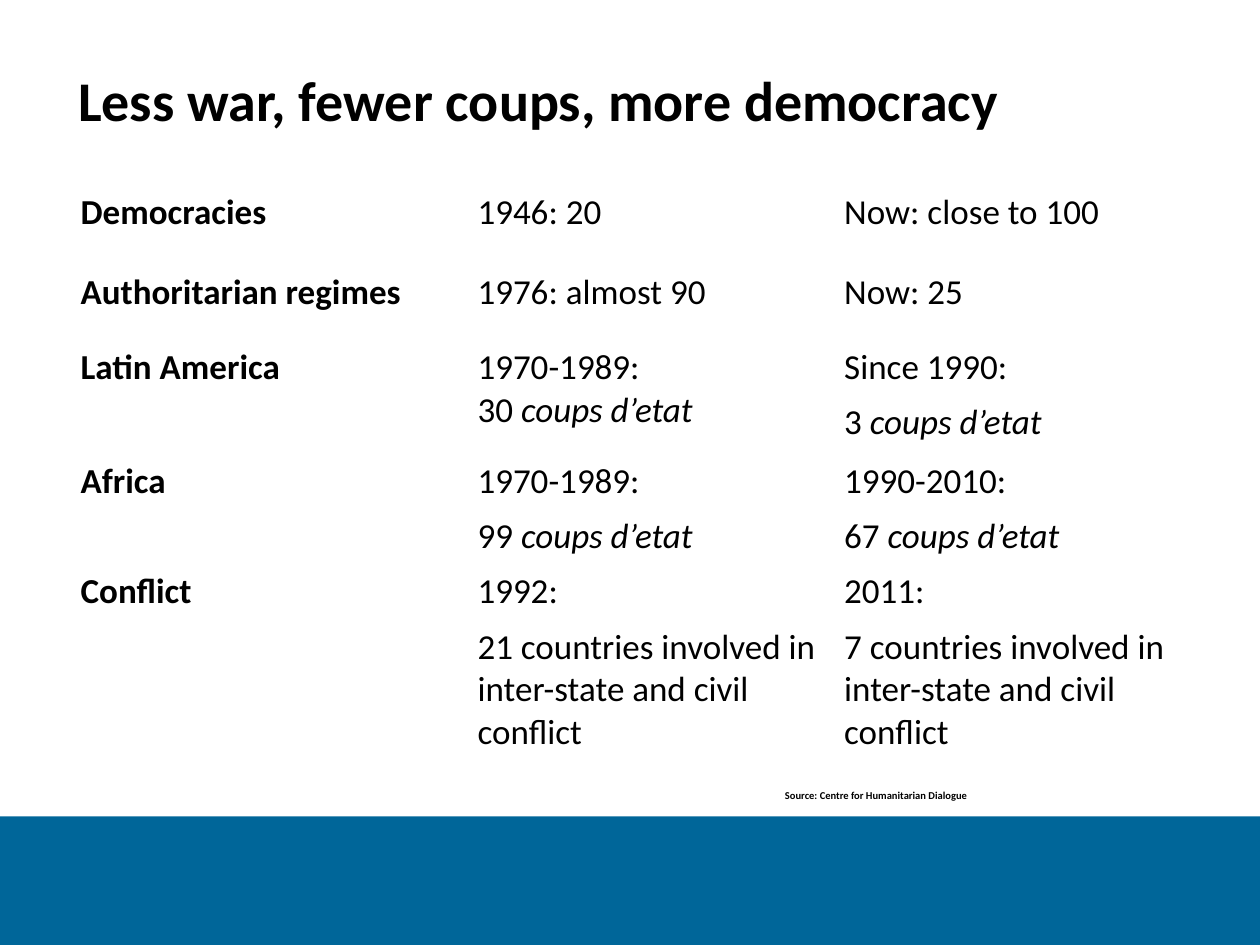
from dataclasses import dataclass

from lxml import etree
from pptx import Presentation
from pptx.dml.color import RGBColor
from pptx.enum.shapes import MSO_SHAPE
from pptx.enum.text import MSO_ANCHOR, PP_ALIGN
from pptx.oxml.ns import qn
from pptx.util import Inches, Pt

RECTANGLE = MSO_SHAPE.RECTANGLE
LEFT = PP_ALIGN.LEFT
TOP, MIDDLE, BOTTOM = MSO_ANCHOR.TOP, MSO_ANCHOR.MIDDLE, MSO_ANCHOR.BOTTOM
TITLE_ONLY = 5


@dataclass(frozen=True)
class Theme:
    font: str = "Calibri"
    text: str = "000000"
    band: str = "006699"
    rule: str = "FFFFFF"
    title_size: float = 32
    table_size: float = 20
    source_size: float = 6
    paragraph_gap: float = 7
    outer_rule: float = 2.25
    inner_rule: float = 1


THEME = Theme()
SLIDE_W, SLIDE_H = 10, 7.5
COLUMNS = (3.15, 2.91, 2.85)
ROWS = (0.63, 0.6, 0.9, 0.87, 1.53)
ITALIC = "coups d’etat"

# Each cell is a list of paragraphs; \v breaks a line within a paragraph.
FACTS = [
    (["Democracies"], ["1946: 20"], ["Now: close to 100"]),
    (["Authoritarian regimes"], ["1976: almost 90"], ["Now: 25"]),
    (["Latin America"], [f"1970-1989:\v30 {ITALIC}"],
     ["Since 1990:", f"3 {ITALIC}"]),
    (["Africa"], ["1970-1989:", f"99 {ITALIC}"],
     ["1990-2010:", f"67 {ITALIC}"]),
    (["Conflict"],
     ["1992:", "21 countries involved in inter-state and civil conflict"],
     ["2011:", "7 countries involved in inter-state and civil conflict"]),
]


def inches(box):
    return [Inches(v) for v in box]


def set_margins(target, margin):
    target.margin_left = target.margin_right = Inches(margin)
    target.margin_top = target.margin_bottom = Inches(margin)


def format_runs(p, size, bold):
    p.alignment = LEFT
    for r in p.runs:
        r.font.name = THEME.font
        r.font.size = Pt(size)
        r.font.bold = bold
        r.font.italic = r.text == ITALIC
        r.font.color.rgb = RGBColor.from_string(THEME.text)


def fill_frame(tf, text, size, margin, anchor):
    tf.word_wrap = True
    tf.vertical_anchor = anchor
    set_margins(tf, margin)
    tf.text = text
    format_runs(tf.paragraphs[0], size, True)


def add_band(slide, box):
    sp = slide.shapes.add_shape(RECTANGLE, *inches(box))
    sp.shadow.inherit = False
    sp.fill.solid()
    sp.fill.fore_color.rgb = RGBColor.from_string(THEME.band)
    sp.line.fill.background()


def add_title(slide, box):
    title = slide.shapes.title
    title.left, title.top, title.width, title.height = inches(box)
    fill_frame(title.text_frame, "Less war, fewer coups, more democracy",
               THEME.title_size, 0, MIDDLE)


def set_borders(cell, row, col):
    """Rule the cell, heavier along the outer edges of the table."""
    outer = {
        "a:lnL": col == 0,
        "a:lnR": col == len(COLUMNS) - 1,
        "a:lnT": row == 0,
        "a:lnB": row == len(ROWS) - 1,
    }
    tc_pr = cell._tc.get_or_add_tcPr()
    for tag, is_outer in outer.items():
        width = THEME.outer_rule if is_outer else THEME.inner_rule
        ln = etree.SubElement(tc_pr, qn(tag), w=str(Pt(width)))
        fill = etree.SubElement(ln, qn("a:solidFill"))
        etree.SubElement(fill, qn("a:srgbClr"), val=THEME.rule)


def fill_cell(cell, paragraphs, bold):
    set_margins(cell, 0.05)
    cell.vertical_anchor = TOP
    tf = cell.text_frame
    for i, text in enumerate(paragraphs):
        p = tf.add_paragraph() if i else tf.paragraphs[0]
        plain, italic, _ = text.partition(ITALIC)
        p.text = plain
        if italic:
            p.add_run().text = italic
        if i:
            p.space_before = Pt(THEME.paragraph_gap)
        format_runs(p, THEME.table_size, bold)


def add_facts(slide, left, top):
    box = (left, top, sum(COLUMNS), sum(ROWS))
    table = slide.shapes.add_table(len(ROWS), len(COLUMNS), *inches(box)).table
    table.first_row = table.horz_banding = False
    for column, width in zip(table.columns, COLUMNS):
        column.width = Inches(width)
    for row, height in zip(table.rows, ROWS):
        row.height = Inches(height)
    for i, facts in enumerate(FACTS):
        for j, paragraphs in enumerate(facts):
            cell = table.cell(i, j)
            set_borders(cell, i, j)
            cell.fill.background()
            fill_cell(cell, paragraphs, bold=j == 0)


def add_source(slide, box):
    tf = slide.shapes.add_textbox(*inches(box)).text_frame
    fill_frame(tf, "Source: Centre for Humanitarian Dialogue",
               THEME.source_size, 0.05, BOTTOM)


def main():
    prs = Presentation()
    prs.slide_width, prs.slide_height = Inches(SLIDE_W), Inches(SLIDE_H)
    slide = prs.slides.add_slide(prs.slide_layouts[TITLE_ONLY])
    band_top = 6.48
    add_band(slide, (0, band_top, SLIDE_W, SLIDE_H - band_top))
    add_title(slide, (0.62, 0.25, 8.96, 1.08))
    add_facts(slide, 0.59, 1.47)
    add_source(slide, (6.18, 6.14, 3.31, 0.27))
    prs.save("out.pptx")


if __name__ == "__main__":
    main()
